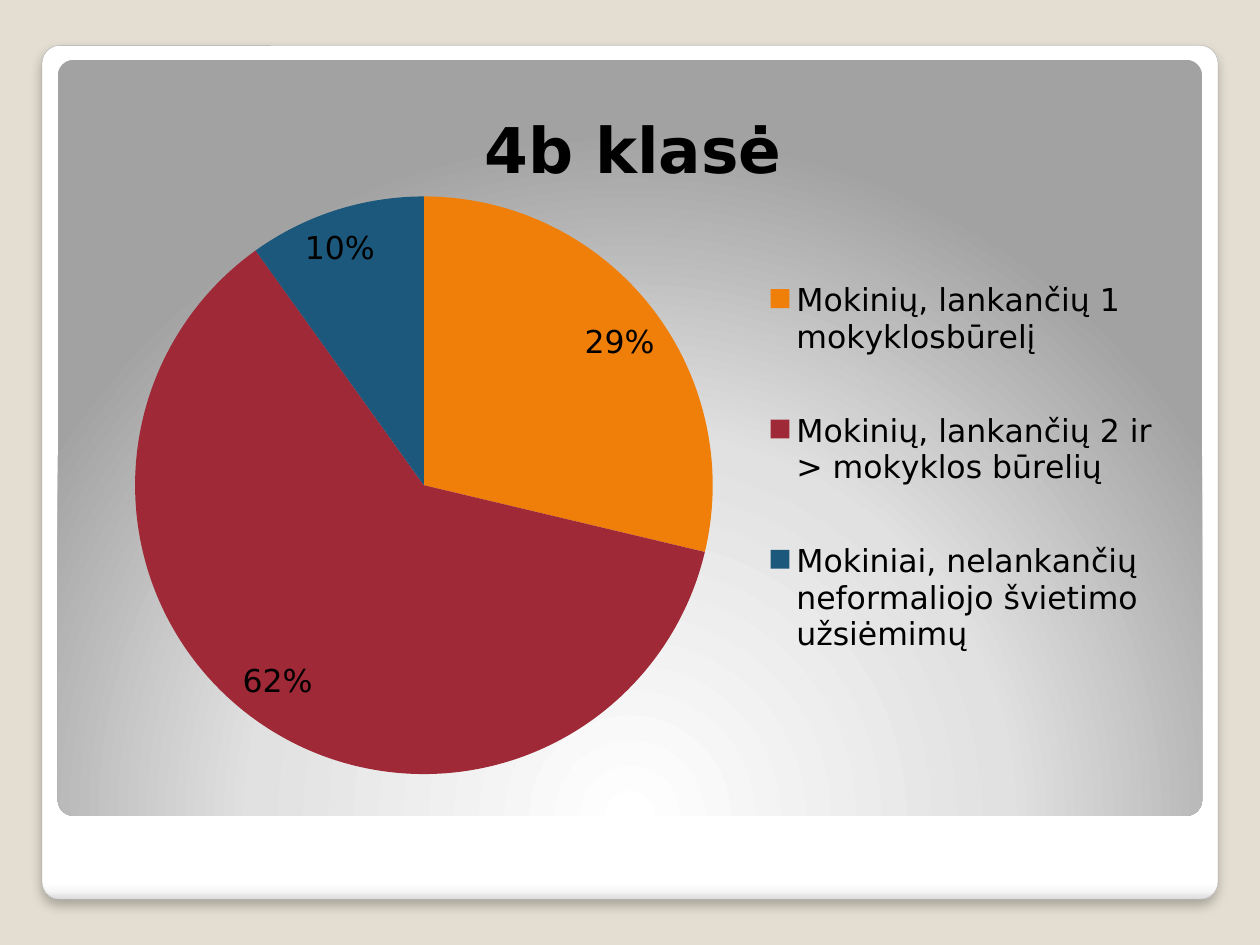
from dataclasses import dataclass

from pptx import Presentation
from pptx.chart.data import CategoryChartData
from pptx.dml.color import RGBColor
from pptx.enum.chart import XL_CHART_TYPE as ChartType
from pptx.enum.chart import XL_LABEL_POSITION as LabelPosition
from pptx.enum.chart import XL_LEGEND_POSITION as LegendPosition
from pptx.enum.shapes import MSO_SHAPE as Preset
from pptx.oxml import parse_xml
from pptx.oxml.ns import nsdecls, qn
from pptx.util import Pt


@dataclass(frozen=True)
class Theme:
    font: str = "DejaVu Sans"
    background: str = "E3DED1"
    frame_line: str = "A4A4A4"
    text: str = "000000"
    shadow: str = "000000"
    frame_stops: tuple = ((0, "FFFFFF"), (98, "FFFFFF"), (99, "F7F7F7"), (100, "DADADA"))
    panel_stops: tuple = ((0, "FFFFFF"), (55, "E1E1E1"), (100, "A2A2A2"))
    slices: tuple = ("F07F09", "9F2936", "1B587C")
    title_size: int = 36
    body_size: int = 18


THEME = Theme()
LINEAR_DOWN = '<a:lin ang="5400000" scaled="0"/>'
RADIAL_FROM_BELOW = (
    '<a:path path="circle">'
    '<a:fillToRect l="50000" t="175000" r="50000" b="-75000"/></a:path>'
)
CHART_BOX = (39.6, 41.8, 644.4, 437.8)
PIE_BOX = (37.4, 70.5, 330.6, 330.1)
LEGEND_BOX = (390.5, 87.4, 238.4, 277)
SHARES = {
    "Mokinių, lankančių 1 mokyklosbūrelį": 29,
    "Mokinių, lankančių 2 ir > mokyklos būrelių": 62,
    "Mokiniai, nelankančių neformaliojo švietimo užsiėmimų": 10,
}


def color(value):
    return RGBColor.from_string(value)


def format_font(font, size, bold=False):
    font.name = THEME.font
    font.size = Pt(size)
    font.bold = bold
    font.color.rgb = color(THEME.text)


def write_text(text_frame, text, **font_format):
    run = text_frame.paragraphs[0].add_run()
    run.text = text
    format_font(run.font, **font_format)


def set_gradient(shape, stops, direction):
    shape.fill.background()
    stop_list = "".join(
        f'<a:gs pos="{position * 1000}"><a:srgbClr val="{value}"/></a:gs>'
        for position, value in stops
    )
    gradient = parse_xml(
        f'<a:gradFill {nsdecls("a")} rotWithShape="1">'
        f"<a:gsLst>{stop_list}</a:gsLst>{direction}</a:gradFill>"
    )
    properties = shape._element.spPr
    properties.replace(properties.find(qn("a:noFill")), gradient)


def add_card(slide, box, stops, direction):
    shape = slide.shapes.add_shape(Preset.ROUNDED_RECTANGLE, *map(Pt, box))
    shape.adjustments[0] = 0.021
    shape.shadow.inherit = False
    shape.line.fill.background()
    set_gradient(shape, stops, direction)
    return shape


def add_shadow(shape, blur, distance, opacity):
    shape._element.spPr.find(qn("a:effectLst")).append(parse_xml(
        f'<a:outerShdw {nsdecls("a")} blurRad="{Pt(blur)}" dist="{Pt(distance)}" '
        f'dir="5400000" algn="t" rotWithShape="0"><a:srgbClr val="{THEME.shadow}">'
        f'<a:alpha val="{opacity * 1000}"/></a:srgbClr></a:outerShdw>'
    ))


def set_layout(element, position, box, chart_box, target=""):
    for existing in element.findall(qn("c:layout")):
        element.remove(existing)
    sizes = "".join(
        f'<c:{name} val="{length / whole:.4f}"/>'
        for name, length, whole in zip("xywh", box, chart_box[2:] * 2)
    )
    element.insert(position, parse_xml(
        f'<c:layout {nsdecls("c")}><c:manualLayout>{target}'
        f'<c:xMode val="edge"/><c:yMode val="edge"/>{sizes}'
        "</c:manualLayout></c:layout>"
    ))


def add_pie(slide, box, title, shares):
    data = CategoryChartData()
    data.categories = list(shares)
    data.add_series("Series 1", list(shares.values()))
    chart = slide.shapes.add_chart(ChartType.PIE, *map(Pt, box), data).chart
    format_font(chart.font, THEME.body_size)
    chart.has_title = True
    chart.chart_title.include_in_layout = False
    write_text(chart.chart_title.text_frame, title, size=THEME.title_size, bold=True)

    chart.has_legend = True
    legend = chart.legend
    legend.position = LegendPosition.RIGHT
    legend.include_in_layout = False
    format_font(legend.font, THEME.body_size)
    set_layout(legend._element, 1, LEGEND_BOX, box)

    plot = chart.plots[0]
    plot.vary_by_categories = True
    set_layout(plot._element.getparent(), 0, PIE_BOX, box,
               '<c:layoutTarget val="inner"/>')
    for index, value in enumerate(THEME.slices):
        fill = plot.series[0].points[index].format.fill
        fill.solid()
        fill.fore_color.rgb = color(value)

    plot.has_data_labels = True
    labels = plot.data_labels
    labels.show_percentage = False
    labels.show_value = True
    labels.number_format = '0"%"'
    labels.number_format_is_linked = False
    labels.position = LabelPosition.BEST_FIT
    format_font(labels.font, THEME.body_size)


def main():
    presentation = Presentation()
    presentation.slide_width, presentation.slide_height = Pt(720), Pt(540)
    slide = presentation.slides.add_slide(presentation.slide_layouts[6])
    slide.background.fill.solid()
    slide.background.fill.fore_color.rgb = color(THEME.background)

    frame = add_card(slide, (24, 26, 672, 488), THEME.frame_stops, LINEAR_DOWN)
    frame.line.color.rgb = color(THEME.frame_line)
    frame.line.width = Pt(0.16)
    add_shadow(frame, blur=6, distance=4, opacity=25)
    add_card(slide, (33, 34.2, 654, 432), THEME.panel_stops, RADIAL_FROM_BELOW)
    add_pie(slide, CHART_BOX, "4b klasė", SHARES)
    presentation.save("out.pptx")


if __name__ == "__main__":
    main()
